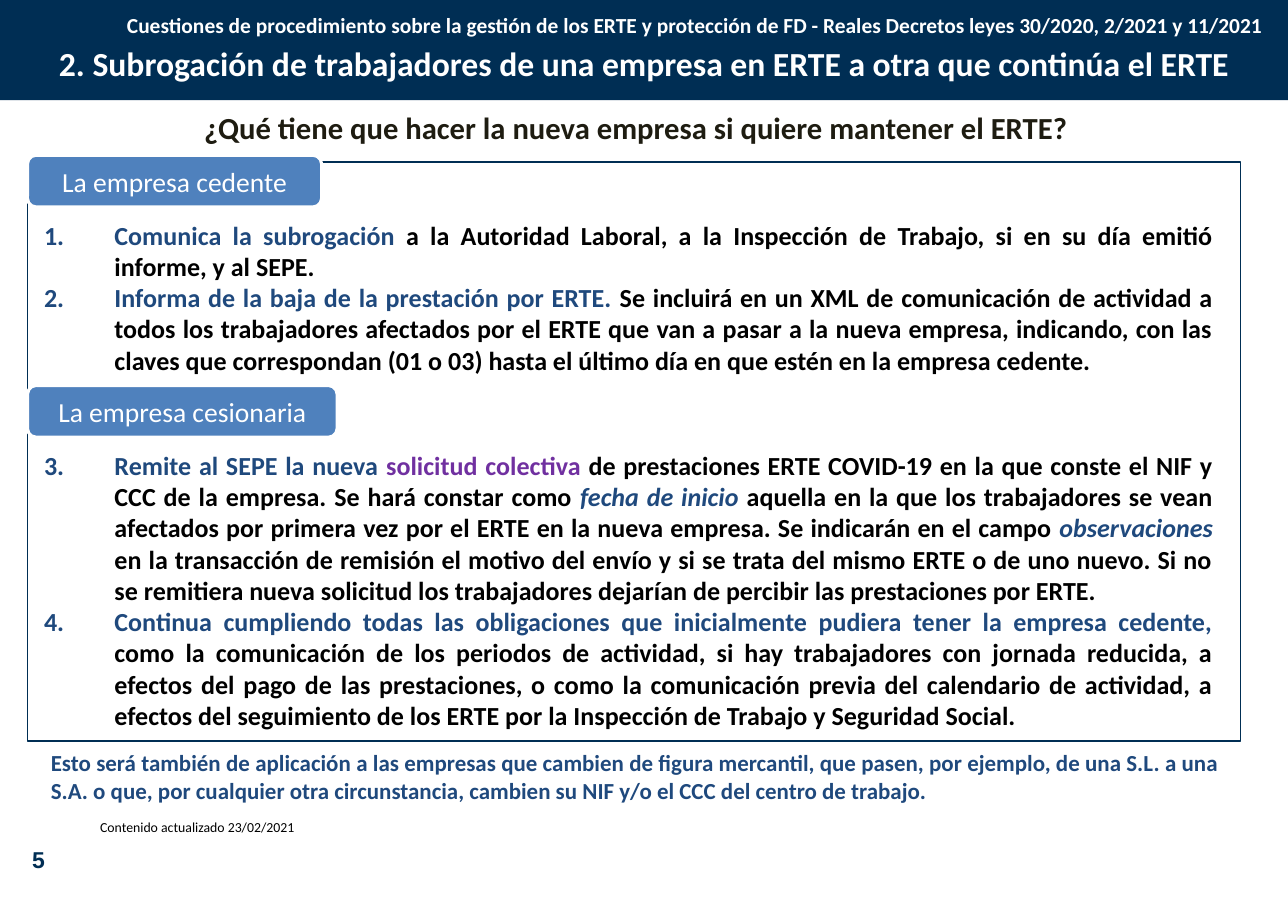
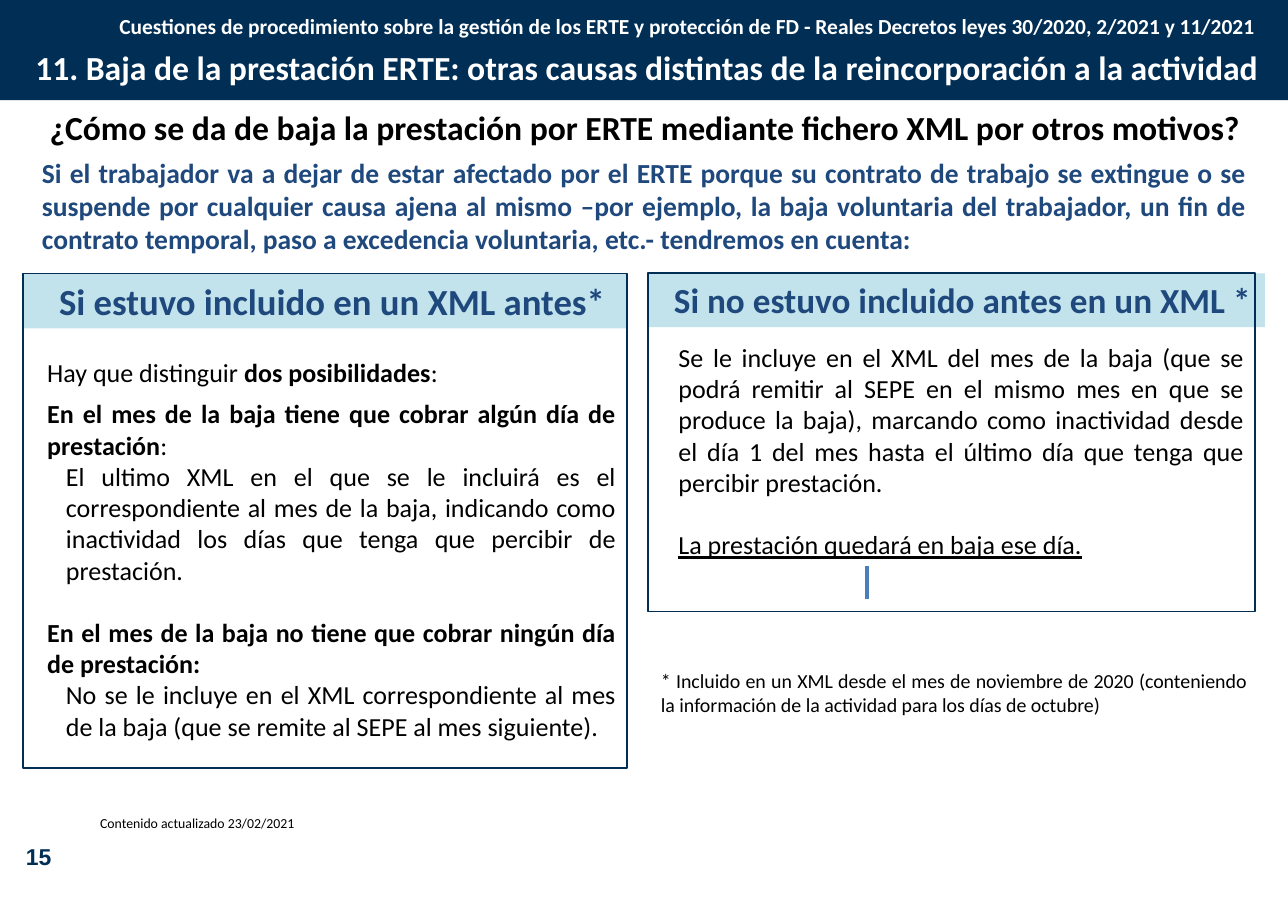
"""Build two slides on ERTE procedures."""
import dataclasses

import lxml.etree
import pptx
import pptx.dml.color
import pptx.enum.shapes
import pptx.enum.text
import pptx.oxml.ns
import pptx.util

Pt = pptx.util.Pt
RGB = pptx.dml.color.RGBColor
ALIGN = pptx.enum.text.PP_ALIGN
ANCHOR = pptx.enum.text.MSO_ANCHOR
SHAPE = pptx.enum.shapes.MSO_SHAPE
qn = pptx.oxml.ns.qn

NAVY = RGB(0x00, 0x2E, 0x54)
BLUE = RGB(0x1F, 0x49, 0x7D)
LABEL_BLUE = RGB(0x4F, 0x81, 0xBD)
MARK_BLUE = RGB(0x4B, 0x7E, 0xBC)
PALE_BLUE = RGB(0xC2, 0xE3, 0xEC)
PURPLE = RGB(0x70, 0x30, 0xA0)
DARK = RGB(0x1E, 0x1C, 0x11)
BLACK = RGB(0, 0, 0)
WHITE = RGB(0xFF, 0xFF, 0xFF)

WIDTH, HEIGHT = 841.68, 595.44
BAND_HEIGHT = 65.5
NARROW = (7.2, 3.6)
WIDE = (9.4, 4.3)
HEADER = ("Cuestiones de procedimiento sobre la gestión de los ERTE y protección de FD - "
          "Reales Decretos leyes 30/2020, 2/2021 y 11/2021")
UPDATED = "Contenido actualizado 23/02/2021"


@dataclasses.dataclass
class Para:
    """A paragraph of (text, colour, style letters) runs."""
    runs: list
    left: float = 0
    before: float = 0
    start: int = 0


def write(sp, paras, size, align=ALIGN.LEFT, inset=NARROW, anchor=ANCHOR.TOP, font="Calibri"):
    """Fill a shape's text frame run by run."""
    tf = sp.text_frame
    tf.word_wrap = True
    tf.vertical_anchor = anchor
    tf.margin_left = tf.margin_right = Pt(inset[0])
    tf.margin_top = tf.margin_bottom = Pt(inset[1])
    for i, para in enumerate(paras):
        p = tf.add_paragraph() if i else tf.paragraphs[0]
        p.alignment = align
        p.space_before = Pt(para.before)
        pPr = p._p.get_or_add_pPr()
        pPr.set("marL", str(Pt(para.left)))
        pPr.set("indent", str(-Pt(para.left) if para.start else 0))
        if para.start:
            lxml.etree.SubElement(pPr, qn("a:buAutoNum"), type="arabicPeriod",
                                  startAt=str(para.start))
        for text, color, style in para.runs:
            r = p.add_run()
            r.text = text
            r.font.name = font
            r.font.size = Pt(size)
            r.font.color.rgb = color
            r.font.bold = "b" in style
            r.font.italic = "i" in style
            r.font.underline = "u" in style


def add_box(s, box, fill=None, line=None, weight=1, kind=SHAPE.RECTANGLE):
    """Add a flat preset shape."""
    sp = s.shapes.add_shape(kind, *map(Pt, box))
    sp.shadow.inherit = False
    if fill is None:
        sp.fill.background()
    else:
        sp.fill.solid()
        sp.fill.fore_color.rgb = fill
    if line is None:
        sp.line.fill.background()
    else:
        sp.line.color.rgb = line
        sp.line.width = Pt(weight)
    return sp


def add_text(s, box, paras, size, **options):
    """Add a text box holding the given paragraphs."""
    write(s.shapes.add_textbox(*map(Pt, box)), paras, size, **options)


def add_line(s, text, box, size, color, style="b", **options):
    """Add a text box holding a single run."""
    add_text(s, box, [Para([(text, color, style)])], size, **options)


def add_frame(prs, number, title, title_box, title_align, header_box, footer_top):
    """Add a slide with its band, header, title, date and page number."""
    s = prs.slides.add_slide(prs.slide_layouts[6])
    add_box(s, (0, 0, WIDTH, BAND_HEIGHT), NAVY)
    add_line(s, HEADER, header_box, 14, WHITE, align=ALIGN.RIGHT, inset=WIDE)
    add_line(s, title, title_box, 22, WHITE, align=title_align, inset=WIDE)
    add_line(s, UPDATED, (58.3, footer_top, 170, 18), 9, BLACK, "")
    sp = add_box(s, (0, footer_top + 14.4, 50.4, 31.7), WHITE)
    write(sp, [Para([(number, NAVY, "b")])], 15, ALIGN.CENTER, (8.6, 4.3),
          ANCHOR.MIDDLE, "Arial")
    return s


def add_company(s, box, label, label_width, steps):
    """Add a company label with its numbered steps below."""
    x, y, w, h = box
    sp = add_box(s, (x, y, label_width, 33.8), LABEL_BLUE, WHITE, 2, SHAPE.ROUNDED_RECTANGLE)
    write(sp, [Para([(label, WHITE, "")])], 18, ALIGN.CENTER, anchor=ANCHOR.MIDDLE)
    add_text(s, (x + 10.8, y + 41.8, w - 28.8, h - 41.8), steps, 17,
             align=ALIGN.JUSTIFY, inset=(0, 0))


def add_panel(s, box, heading, heading_size, heading_box, text_box, paras):
    """Add an outlined panel; inner boxes are relative to its corner."""
    x, y = box[:2]

    def place(inner):
        """Shift an inner box to the panel's corner."""
        return (x + inner[0], y + inner[1], *inner[2:])

    sp = add_box(s, place(heading_box), PALE_BLUE)
    write(sp, [Para([(heading, BLUE, "b")], 8.6)], heading_size, ALIGN.CENTER)
    add_text(s, place(text_box), paras, 17, align=ALIGN.JUSTIFY)
    add_box(s, box, line=NAVY)


def build_transfer(prs):
    """Build the slide on transferring workers between companies."""
    s = add_frame(prs, "5",
                  "2. Subrogación de trabajadores de una empresa en ERTE a otra que continúa el ERTE",
                  (0, 23.8, WIDTH, 36), ALIGN.CENTER, (0, 3.6, 835.2, 26), 531.4)
    add_line(s, "¿Qué tiene que hacer la nueva empresa si quiere mantener el ERTE?",
             (13, 67, 805, 33.8), 20, DARK, align=ALIGN.CENTER, inset=WIDE)
    x, w = 18, 792.7
    add_box(s, (x, 105.8, w, 378.7), WHITE, NAVY)
    add_company(s, (x, 101.5, w, 146), "La empresa cedente", 192.2, [
        Para([("Comunica la subrogación ", BLUE, "b"),
              ("a la Autoridad Laboral, a la Inspección de Trabajo, si en su día emitió "
               "informe, y al SEPE.", BLACK, "b")], 46, start=1),
        Para([("Informa de la baja de la prestación por ERTE. ", BLUE, "b"),
              ("Se incluirá en un XML de comunicación de actividad a todos los trabajadores "
               "afectados por el ERTE que van a pasar a la nueva empresa, indicando, con las "
               "claves que correspondan (01 o 03) hasta el último día en que estén en la "
               "empresa cedente.", BLACK, "b")], 46, start=1),
    ])
    add_company(s, (x, 252, w, 232), "La empresa cesionaria", 202.3, [
        Para([("Remite al SEPE la nueva ", BLUE, "b"),
              ("solicitud colectiva ", PURPLE, "b"),
              ("de prestaciones ERTE COVID-19 en la que conste el NIF y CCC de la empresa. "
               "Se hará constar como ", BLACK, "b"),
              ("fecha de inicio ", BLUE, "bi"),
              ("aquella en la que los trabajadores se vean afectados por primera vez por el "
               "ERTE en la nueva empresa. Se indicarán en el campo ", BLACK, "b"),
              ("observaciones", BLUE, "bi"),
              (" en la transacción de remisión el motivo del envío y si se trata del mismo "
               "ERTE o de uno nuevo. Si no se remitiera nueva solicitud los trabajadores "
               "dejarían de percibir las prestaciones por ERTE.", BLACK, "b")], 46, start=3),
        Para([("Continua cumpliendo todas las obligaciones que inicialmente pudiera tener la "
               "empresa cedente, ", BLUE, "b"),
              ("como la comunicación de los periodos de actividad, si hay trabajadores con "
               "jornada reducida, a efectos del pago de las prestaciones, o como la "
               "comunicación previa del calendario de actividad, a efectos del seguimiento de "
               "los ERTE por la Inspección de Trabajo y Seguridad Social.", BLACK, "b")],
             46, start=3),
    ])
    add_line(s, "Esto será también de aplicación a las empresas que cambien de figura mercantil, "
             "que pasen, por ejemplo, de una S.L. a una S.A. o que, por cualquier otra "
             "circunstancia, cambien su NIF y/o el CCC del centro de trabajo.",
             (23.8, 485.3, 782.6, 45.4), 15, BLUE, align=ALIGN.JUSTIFY, inset=WIDE)


def build_removal(prs):
    """Build the slide on ending the benefit for other reasons."""
    s = add_frame(prs, "15",
                  "11. Baja de la prestación ERTE: otras causas distintas de la reincorporación "
                  "a la actividad",
                  (13.7, 26.6, 828, 36), ALIGN.LEFT, (0, 4.3, 830.2, 26), 529.2)
    add_line(s, "¿Cómo se da de baja la prestación por ERTE mediante fichero XML por otros motivos?",
             (1.4, 65.5, 840, 36), 22, BLACK, align=ALIGN.CENTER, inset=WIDE)
    add_line(s, "Si el trabajador va a dejar de estar afectado por el ERTE porque su contrato de "
             "trabajo se extingue o se suspende por cualquier causa ajena al mismo –por ejemplo, "
             "la baja voluntaria del trabajador, un fin de contrato temporal, paso a excedencia "
             "voluntaria, etc.- tendremos en cuenta:",
             (18, 97.9, 806.4, 74.9), 18, BLUE, align=ALIGN.JUSTIFY, inset=WIDE)
    top = 178.6
    add_panel(s, (15.1, top, 394.6, 323.3), "Si estuvo incluido en un XML antes*", 24,
              (0.7, 0, 393.9, 36), (0, 51.1, 394.6, 272), [
        Para([("Hay que distinguir ", BLACK, ""), ("dos posibilidades", BLACK, "b"),
              (":", BLACK, "")], 8.6),
        Para([("En el mes de la baja tiene que cobrar algún día de prestación", BLACK, "b"),
              (":", BLACK, "")], 8.6, 6.5),
        Para([("El ultimo XML en el que se le incluirá es el correspondiente al mes de la baja, "
               "indicando como inactividad los días que tenga que percibir de prestación.",
               BLACK, "")], 20.9),
        Para([("En el mes de la baja no tiene que cobrar ningún día de prestación:",
               BLACK, "b")], 8.6, 20.4),
        Para([("No se le incluye en el XML correspondiente al mes de la baja (que se remite al "
               "SEPE al mes siguiente).", BLACK, "")], 20.9),
    ])
    add_panel(s, (423.4, top, 396.7, 221), "Si no estuvo incluido antes en un XML *", 23,
              (0, 0, 403.2, 35.3), (4.3, 41, 392.4, 172), [
        Para([("Se le incluye en el XML del mes de la baja (que se podrá remitir al SEPE en el "
               "mismo mes en que se produce la baja), marcando como inactividad desde el día 1 "
               "del mes hasta el último día que tenga que percibir prestación.", BLACK, "")], 8.6),
        Para([("La prestación quedará en baja ese día.", BLACK, "u")], 8.6, 20.4),
    ])
    add_line(s, "* Incluido en un XML desde el mes de noviembre de 2020 (conteniendo la "
             "información de la actividad para los días de octubre)",
             (424.8, 433.4, 396.7, 38.9), 13, BLACK, "", align=ALIGN.JUSTIFY)
    mark = s.shapes.add_connector(pptx.enum.shapes.MSO_CONNECTOR.STRAIGHT,
                                  *map(Pt, (566.6, 391.7, 566.6, 370.1)))
    mark.line.color.rgb = MARK_BLUE
    mark.line.width = Pt(2.5)
    lxml.etree.SubElement(mark._element.spPr, qn("a:effectLst"))


def main():
    """Build and save the presentation."""
    prs = pptx.Presentation()
    prs.slide_width, prs.slide_height = Pt(WIDTH), Pt(HEIGHT)
    build_transfer(prs)
    build_removal(prs)
    prs.save("out.pptx")


if __name__ == "__main__":
    main()
